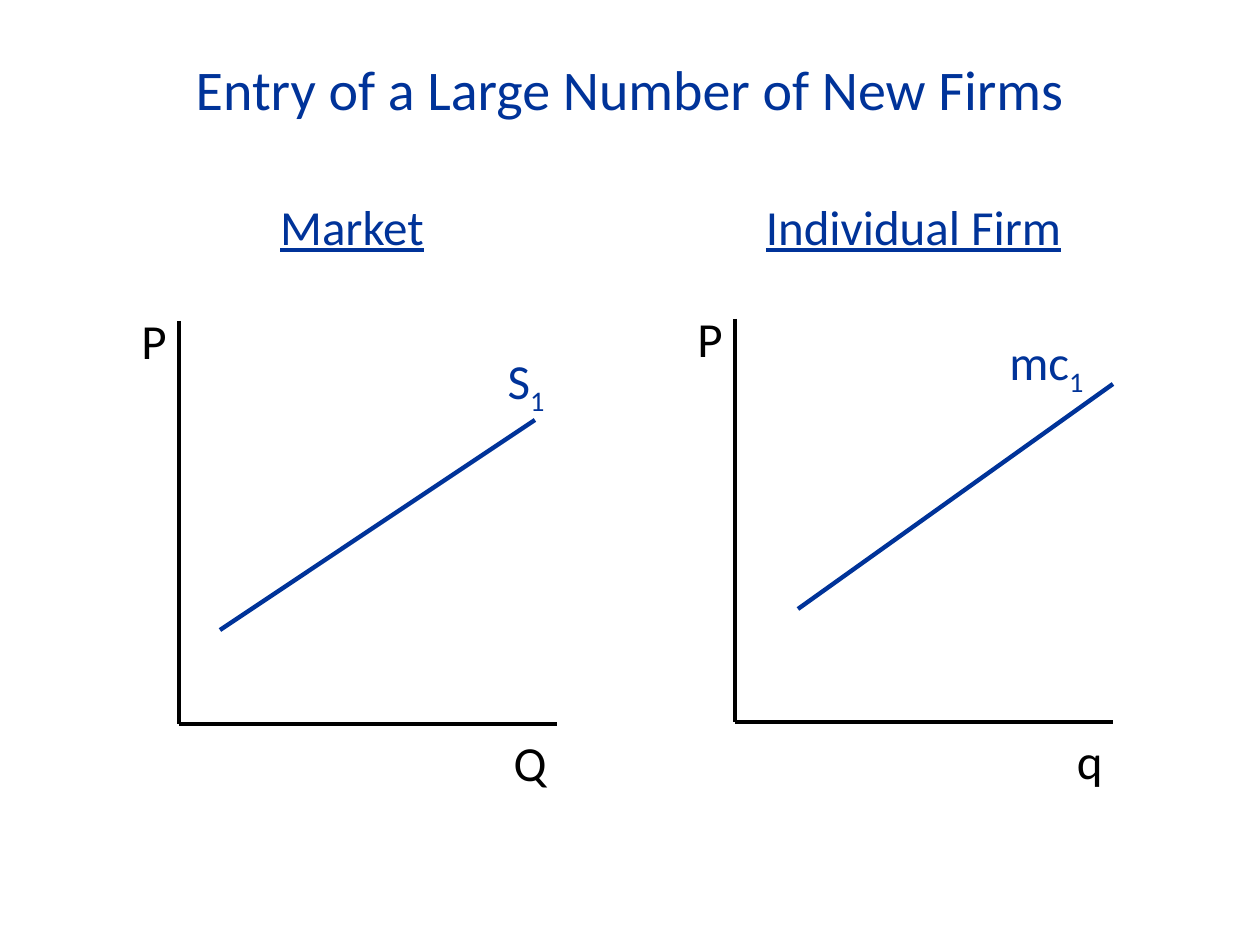
from lxml.etree import SubElement
from pptx import Presentation
from pptx.dml.color import RGBColor
from pptx.enum.shapes import MSO_CONNECTOR as Connector
from pptx.enum.text import MSO_ANCHOR as Anchor, PP_ALIGN as Align
from pptx.oxml.ns import qn
from pptx.util import Emu, Pt

EMU_PER_PX = 914400 / 126
BLACK = RGBColor(0x00, 0x00, 0x00)
BLUE = RGBColor(0x00, 0x33, 0x99)
AXIS_HEIGHT, AXIS_WIDTH = 403, 378
LABEL_HEIGHT = 72

PANELS = [
    {"heading": "Market", "heading_box": (105, 190, 494, LABEL_HEIGHT),
     "origin": (179, 724), "quantity": "Q",
     "curve": ((220, 630), (535, 420)),
     "curve_name": "S", "curve_box": (189, 344, 368, LABEL_HEIGHT)},
    {"heading": "Individual Firm", "heading_box": (742, 190, 343, LABEL_HEIGHT),
     "origin": (735, 722), "quantity": "q",
     "curve": ((798, 609), (1113, 384)),
     "curve_name": "mc", "curve_box": (935, 325, 161, LABEL_HEIGHT)},
]


def px(length):
    """Turn px into EMU."""
    return Emu(round(length * EMU_PER_PX))


def add_run(paragraph, text, color, **formats):
    """Append a formatted run and return it."""
    run = paragraph.add_run()
    run.text = text
    run.font.color.rgb = color
    for name, value in ({"name": "Calibri", "size": Pt(28)} | formats).items():
        setattr(run.font, name, value)
    return run


def add_label(slide, box, text, color, align=Align.RIGHT, anchor=Anchor.TOP, **formats):
    """Add a one-line text box and return its paragraph."""
    frame = slide.shapes.add_textbox(*map(px, box)).text_frame
    frame.word_wrap = True
    frame.vertical_anchor = anchor
    paragraph = frame.paragraphs[0]
    paragraph.alignment = align
    add_run(paragraph, text, color, **formats)
    return paragraph


def add_subscript(paragraph, text, color):
    """Append a lowered run."""
    run = add_run(paragraph, text, color)
    run._r.get_or_add_rPr().set("baseline", "-25000")


def add_line(slide, start, end, color):
    """Draw a straight line without a shadow."""
    line = slide.shapes.add_connector(Connector.STRAIGHT, *map(px, (*start, *end)))
    line.line.color.rgb = color
    line.line.width = Pt(2.5)
    SubElement(line._element.spPr, qn("a:effectLst"))


def add_axes(slide, origin, quantity):
    """Draw the price and quantity axes with their names."""
    x, y = origin
    add_line(slide, (x, y - AXIS_HEIGHT), origin, BLACK)
    add_line(slide, origin, (x + AXIS_WIDTH, y), BLACK)
    add_label(slide, (x - 147, y - 420, 147, LABEL_HEIGHT), "P", BLACK)
    add_label(slide, (x + 257, y + 2, 123, LABEL_HEIGHT), quantity, BLACK)


def add_panel(slide, panel):
    """Draw one graph with its heading and supply curve."""
    add_axes(slide, panel["origin"], panel["quantity"])
    add_label(slide, panel["heading_box"], panel["heading"], BLUE,
              align=Align.CENTER, underline=True)
    add_line(slide, *panel["curve"], BLUE)
    name = add_label(slide, panel["curve_box"], panel["curve_name"], BLUE)
    add_subscript(name, "1", BLUE)


def main():
    """Build and save the slide."""
    presentation = Presentation()
    presentation.slide_width, presentation.slide_height = px(1260), px(945)
    slide = presentation.slides.add_slide(presentation.slide_layouts[6])
    add_label(slide, (88, 48, 1084, 81), "Entry of a Large Number of New Firms", BLUE,
              align=Align.CENTER, anchor=Anchor.MIDDLE, size=Pt(32))
    for panel in PANELS:
        add_panel(slide, panel)
    presentation.save("out.pptx")


if __name__ == "__main__":
    main()
